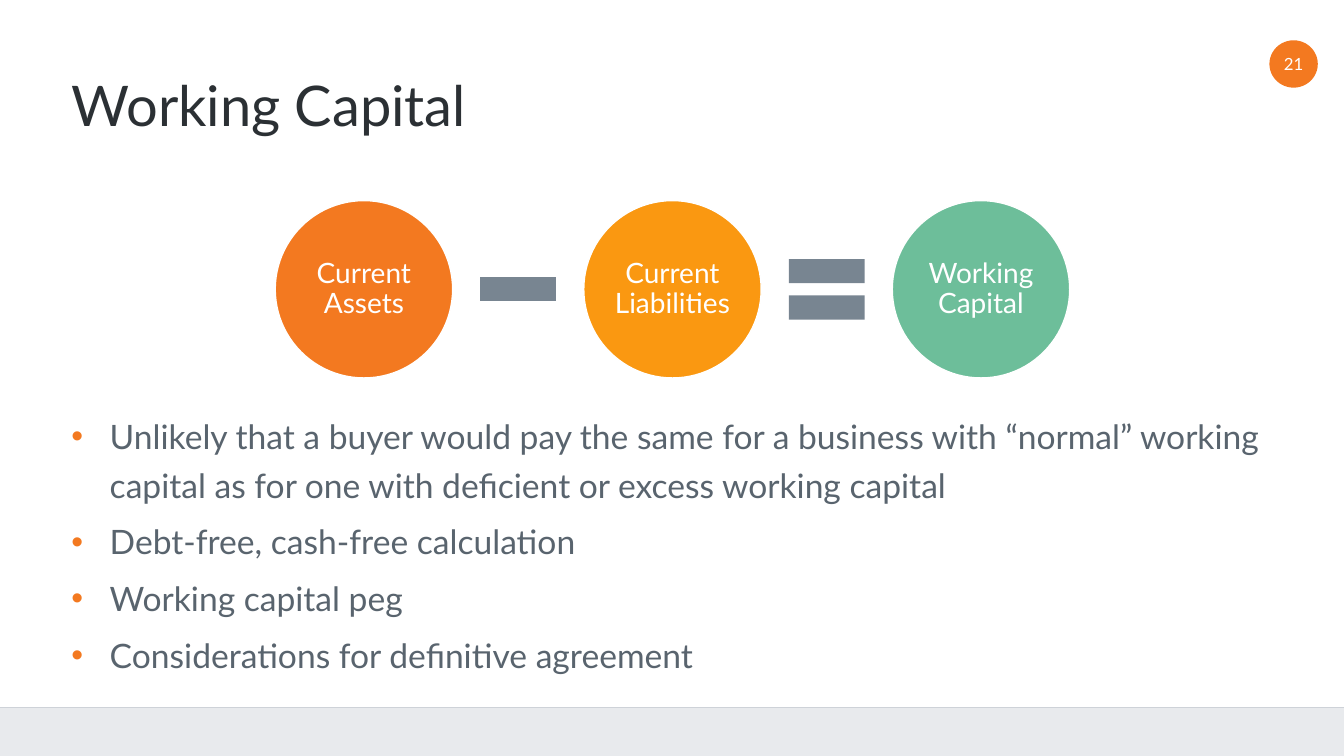
from lxml.etree import SubElement
from pptx import Presentation
from pptx.dml.color import RGBColor
from pptx.enum.shapes import MSO_CONNECTOR, MSO_SHAPE
from pptx.enum.text import MSO_ANCHOR, MSO_AUTO_SIZE, PP_ALIGN
from pptx.oxml.ns import qn
from pptx.util import Inches, Pt

ORANGE = RGBColor(0xF3, 0x79, 0x20)
AMBER = RGBColor(0xFA, 0x98, 0x11)
GREEN = RGBColor(0x6D, 0xBE, 0x9A)
SLATE = RGBColor(0x78, 0x85, 0x91)
INK = RGBColor(0x2B, 0x30, 0x34)
BODY_GREY = RGBColor(0x59, 0x64, 0x6E)
FOOTER_GREY = RGBColor(0xE8, 0xEA, 0xED)
RULE_GREY = RGBColor(0xCE, 0xD2, 0xD8)
WHITE = RGBColor(0xFF, 0xFF, 0xFF)

deck = Presentation()
deck.slide_width, deck.slide_height = Inches(13.33), Inches(7.5)
page = deck.slides.add_slide(deck.slide_layouts[5])


def add_filled(preset, left, top, width, height, color):
    shape = page.shapes.add_shape(
        preset, Inches(left), Inches(top), Inches(width), Inches(height))
    shape.shadow.inherit = False
    shape.fill.solid()
    shape.fill.fore_color.rgb = color
    shape.line.fill.background()
    return shape


def write(frame, lines, size, color, align, inset=None, anchor=MSO_ANCHOR.MIDDLE):
    frame.word_wrap = True
    frame.auto_size = MSO_AUTO_SIZE.NONE
    frame.vertical_anchor = anchor
    if inset is not None:
        frame.margin_left = frame.margin_right = Inches(inset)
        frame.margin_top = frame.margin_bottom = Inches(inset)
    frame.text = "\n".join(lines)
    for para in frame.paragraphs:
        para.alignment = align
        para.font.name = "Lato"
        para.font.size = Pt(size)
        para.font.color.rgb = color
    return frame.paragraphs


footer_top = 7.02
add_filled(MSO_SHAPE.RECTANGLE, 0, footer_top, 13.33, 7.5 - footer_top, FOOTER_GREY)
rule = page.shapes.add_connector(
    MSO_CONNECTOR.STRAIGHT, 0, Inches(footer_top), deck.slide_width, Inches(footer_top))
rule.line.color.rgb = RULE_GREY
rule.line.width = Pt(0.75)
SubElement(rule._element.spPr, qn("a:effectLst"))

margin, content_width = 0.61, 12.12
title = page.shapes.title
title.left, title.top = Inches(margin), Inches(0.4)
title.width, title.height = Inches(content_width), Inches(1.35)
write(title.text_frame, ["Working Capital"], 40, INK, PP_ALIGN.LEFT)[0].line_spacing = 0.9

bullets = [
    "Unlikely that a buyer would pay the same for a business with “normal” working "
    "capital as for one with deficient or excess working capital",
    "Debt-free, cash-free calculation",
    "Working capital peg",
    "Considerations for definitive agreement",
]
body = page.shapes.add_textbox(
    Inches(margin), Inches(4), Inches(content_width), Inches(2.75))
for para in write(body.text_frame, bullets, 24, BODY_GREY, PP_ALIGN.LEFT,
                  anchor=MSO_ANCHOR.TOP):
    properties = para._p.get_or_add_pPr()
    properties.set("marL", str(Inches(0.38)))
    properties.set("indent", str(-Inches(0.38)))
    bullet_color = SubElement(properties, qn("a:buClr"))
    SubElement(bullet_color, qn("a:srgbClr"), val=str(ORANGE))
    SubElement(properties, qn("a:buFont"), typeface="Arial")
    SubElement(properties, qn("a:buChar"), char="•")
    properties.append(properties.find(qn("a:defRPr")))
    para.line_spacing = 1.2
    para.space_after = Pt(6)

circle_size, circle_top, circle_step = 1.76, 1.99, 3.06
sign_size, sign_gap = 1.02, 0.14
terms = [
    ("Current Assets", ORANGE, MSO_SHAPE.MATH_MINUS),
    ("Current Liabilities", AMBER, MSO_SHAPE.MATH_EQUAL),
    ("Working Capital", GREEN, None),
]
for column, (label, color, sign) in enumerate(terms):
    left = 2.73 + column * circle_step
    circle = add_filled(MSO_SHAPE.OVAL, left, circle_top, circle_size, circle_size, color)
    circle.line.color.rgb = WHITE
    circle.line.width = Pt(1)
    write(circle.text_frame, [label], 20, WHITE, PP_ALIGN.CENTER, 0.03)[0].line_spacing = 0.9
    if sign:
        add_filled(sign, left + circle_size + sign_gap,
                   circle_top + (circle_size - sign_size) / 2, sign_size, sign_size, SLATE)

badge = add_filled(MSO_SHAPE.OVAL, 12.59, 0.4, 0.48, 0.47, ORANGE)
write(badge.text_frame, ["21"], 12, WHITE, PP_ALIGN.CENTER, 0)

deck.save("out.pptx")
